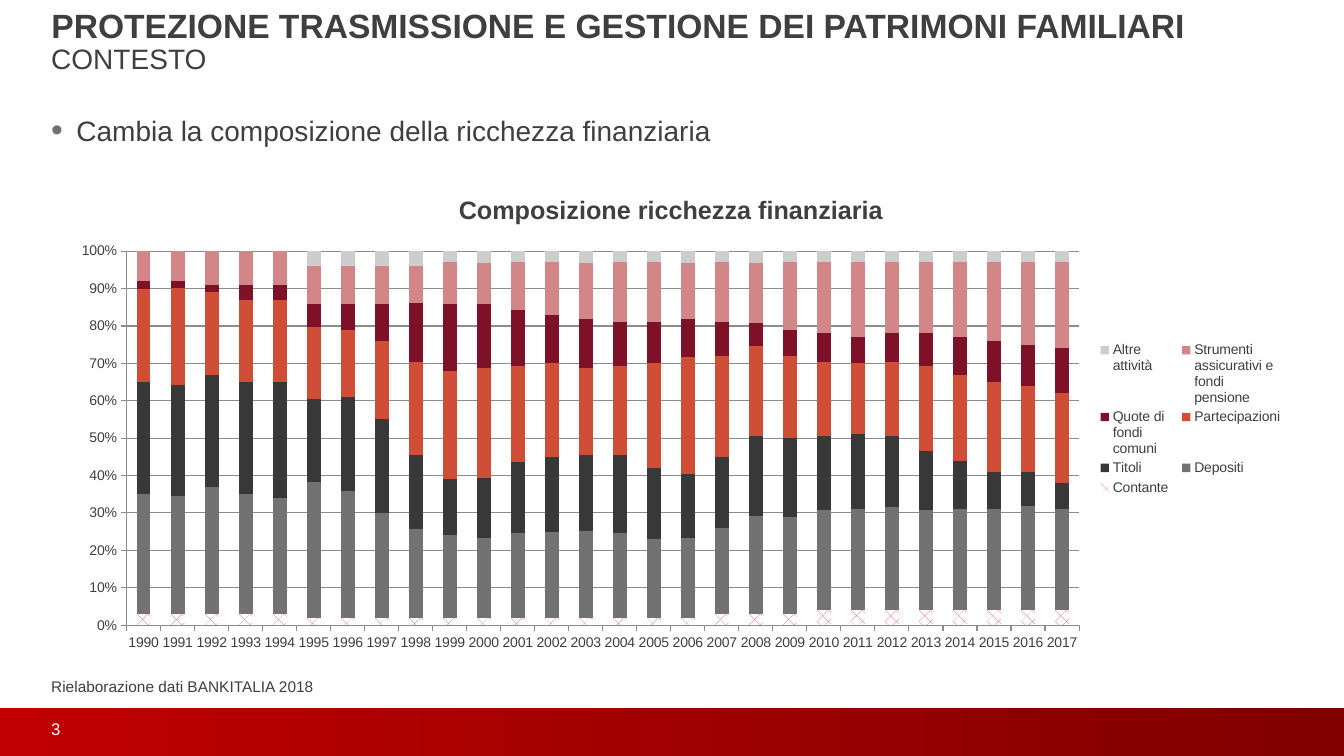
import pptx
import pptx.chart.data
import pptx.dml.color
import pptx.enum.chart
import pptx.enum.dml
import pptx.enum.shapes
import pptx.enum.text
import pptx.oxml
import pptx.util
from lxml import etree

Pt = pptx.util.Pt
FONT = "Arial"
COLOURS = {
    "text": "3F3F3F", "white": "FFFFFF", "bullet": "707173", "lines": "8C8C8C",
    "band start": "C00000", "band end": "800000",
    "cash": "E7456C", "deposits": "727272", "bonds": "383838", "equity": "D04E37",
    "funds": "7E1028", "insurance": "D38688", "other": "CDCDCD",
}


def colour(name):
    return pptx.dml.color.RGBColor.from_string(COLOURS[name])


def write_text(box, text, *, size, tint="text", bold=False, anchor="TOP",
               right=7.2, spacing=0.9, bullet=False):
    frame = box.text_frame
    frame.word_wrap = True
    frame.auto_size = pptx.enum.text.MSO_AUTO_SIZE.NONE
    frame.vertical_anchor = getattr(pptx.enum.text.MSO_ANCHOR, anchor)
    frame.margin_left, frame.margin_right = Pt(7.2), Pt(right)
    frame.margin_top = frame.margin_bottom = Pt(3.6)
    para = frame.paragraphs[0]
    para.alignment = pptx.enum.text.PP_ALIGN.LEFT
    para.line_spacing = spacing
    if bullet:
        properties = para._p.get_or_add_pPr()
        properties.set("marL", str(Pt(18)))
        properties.set("indent", str(Pt(-18)))
        tag = pptx.oxml.ns.qn
        bullet_colour = etree.SubElement(properties, tag("a:buClr"))
        etree.SubElement(bullet_colour, tag("a:srgbClr"), val=COLOURS["bullet"])
        etree.SubElement(properties, tag("a:buSzPct"), val="120000")
        etree.SubElement(properties, tag("a:buFont"), typeface=FONT)
        etree.SubElement(properties, tag("a:buChar"), char="•")
    span = para.add_run()
    span.text = text
    span.font.name, span.font.size, span.font.bold = FONT, Pt(size), bold
    span.font.color.rgb = colour(tint)


deck = pptx.Presentation()
deck.slide_width, deck.slide_height = Pt(960), Pt(540)
page = deck.slides.add_slide(deck.slide_layouts[5])

# Bottom band
band = page.shapes.add_shape(pptx.enum.shapes.MSO_SHAPE.RECTANGLE,
                             Pt(0), Pt(506), Pt(960), Pt(34))
band.shadow.inherit = False
band.line.fill.background()
band.fill.gradient()
band.fill.gradient_angle = 0
for stop, name in zip(band.fill.gradient_stops, ("band start", "band end")):
    stop.color.rgb = colour(name)

# Title
title = page.shapes.title
title.left, title.top, title.width, title.height = Pt(29.5), Pt(3), Pt(900), Pt(28)
write_text(title, "PROTEZIONE TRASMISSIONE E GESTIONE DEI PATRIMONI FAMILIARI",
           size=24, bold=True, right=0)

# Subtitle, message, source and page number
texts = [
    ("CONTESTO", (28, 739, 30), dict(size=20, anchor="MIDDLE")),
    ("Cambia la composizione della ricchezza finanziaria", (80, 901, 36),
     dict(size=20, bullet=True)),
    ("Rielaborazione dati BANKITALIA 2018", (481.5, 546, 22), dict(size=11)),
    ("3", (506, 68, 29), dict(size=12, tint="white", anchor="MIDDLE", spacing=1.0)),
]
for text, (top, width, height), style in texts:
    box = page.shapes.add_textbox(Pt(29.5), Pt(top), Pt(width), Pt(height))
    write_text(box, text, **style)

# Chart data, from the bottom of the stack upwards
wealth = [
    ("Contante", "cash",
     [3, 3, 3, 3, 3, 2, 2, 2, 2, 2, 2, 2, 2, 2, 2, 2, 2, 3, 3, 3, 4, 4, 4, 4, 4, 4, 4, 4]),
    ("Depositi", "deposits",
     [32, 32, 34, 32, 31, 36, 34, 28, 24, 22, 21, 23, 23, 23,
      23, 21, 21, 23, 26, 26, 27, 27, 28, 27, 27, 27, 28, 27]),
    ("Titoli", "bonds",
     [30, 30, 30, 30, 31, 22, 25, 25, 20, 15, 16, 19, 20, 20,
      21, 19, 17, 19, 21, 21, 20, 20, 19, 16, 13, 10, 9, 7]),
    ("Partecipazioni", "equity",
     [25, 26, 22, 22, 22, 19, 18, 21, 25, 29, 29, 26, 25, 23,
      24, 28, 31, 27, 24, 22, 20, 19, 20, 23, 23, 24, 23, 24]),
    ("Quote di\nfondi\ncomuni", "funds",
     [2, 2, 2, 4, 4, 6, 7, 10, 16, 18, 17, 15, 13, 13,
      12, 11, 10, 9, 6, 7, 8, 7, 8, 9, 10, 11, 11, 12]),
    ("Strumenti\nassicurativi e\nfondi\npensione", "insurance",
     [8, 8, 9, 9, 9, 10, 10, 10, 10, 11, 11, 13, 14, 15,
      16, 16, 15, 16, 16, 18, 19, 20, 19, 19, 20, 21, 22, 23]),
    ("Altre\nattività", "other", [0] * 5 + [4] * 4 + [3] * 19),
]
data = pptx.chart.data.CategoryChartData(number_format="#,##0.0")
data.categories = [str(year) for year in range(1990, 2018)]
for name, tint, values in wealth:
    data.add_series(name, values)

# Chart
chart = page.shapes.add_chart(pptx.enum.chart.XL_CHART_TYPE.COLUMN_STACKED_100,
                              Pt(37.5), Pt(124), Pt(883.5), Pt(347), data).chart
chart.font.name, chart.font.size = FONT, Pt(10)
chart.font.color.rgb = colour("text")
chart.has_title = True
heading = chart.chart_title.text_frame
heading.text = "Composizione ricchezza finanziaria"
heading_font = heading.paragraphs[0].runs[0].font
heading_font.name, heading_font.size, heading_font.bold = FONT, Pt(18), True
heading_font.color.rgb = colour("text")
chart.has_legend = True
chart.legend.position = pptx.enum.chart.XL_LEGEND_POSITION.RIGHT
chart.legend.include_in_layout = False

# Columns
plot = chart.plots[0]
plot.gap_width, plot.overlap, plot.vary_by_categories = 150, 100, False
for series, (name, tint, values) in zip(plot.series, wealth):
    fill = series.format.fill
    if tint == "cash":
        fill.patterned()
        fill.pattern = pptx.enum.dml.MSO_PATTERN.PERCENT_25
        fill.fore_color.rgb, fill.back_color.rgb = colour(tint), colour("white")
    else:
        fill.solid()
        fill.fore_color.rgb = colour(tint)

# Axes
for axis in (chart.category_axis, chart.value_axis):
    axis.major_tick_mark = pptx.enum.chart.XL_TICK_MARK.OUTSIDE
    axis.format.line.color.rgb = colour("lines")
    axis.format.line.width = Pt(0.75)
chart.category_axis.tick_labels.offset = 100
value_axis = chart.value_axis
value_axis.minimum_scale, value_axis.maximum_scale, value_axis.major_unit = 0, 1, 0.1
value_axis.tick_labels.number_format = "0%"
value_axis.tick_labels.number_format_is_linked = False
value_axis.has_major_gridlines = True
value_axis.major_gridlines.format.line.color.rgb = colour("lines")
value_axis.major_gridlines.format.line.width = Pt(0.75)

# Plot and legend positions, as shares of the chart
plot_area = chart._chartSpace.chart.plotArea
legend = chart.legend._element
for old in plot_area.findall(pptx.oxml.ns.qn("c:layout")):
    plot_area.remove(old)
for old in legend.findall(pptx.oxml.ns.qn("c:layout")):
    legend.remove(old)
layouts = [
    (plot_area, 0, '<c:layoutTarget val="inner"/>', (0.06, 0.16, 0.77, 0.77)),
    (legend, 1, "", (0.84, 0.34, 0.16, 0.33)),
]
for parent, index, target, shares in layouts:
    numbers = "".join(f'<c:{key} val="{share}"/>' for key, share in zip("xywh", shares))
    parent.insert(index, pptx.oxml.parse_xml(
        f'<c:layout {pptx.oxml.ns.nsdecls("c")}><c:manualLayout>{target}'
        f'<c:xMode val="edge"/><c:yMode val="edge"/>{numbers}</c:manualLayout></c:layout>'))

deck.save("out.pptx")
